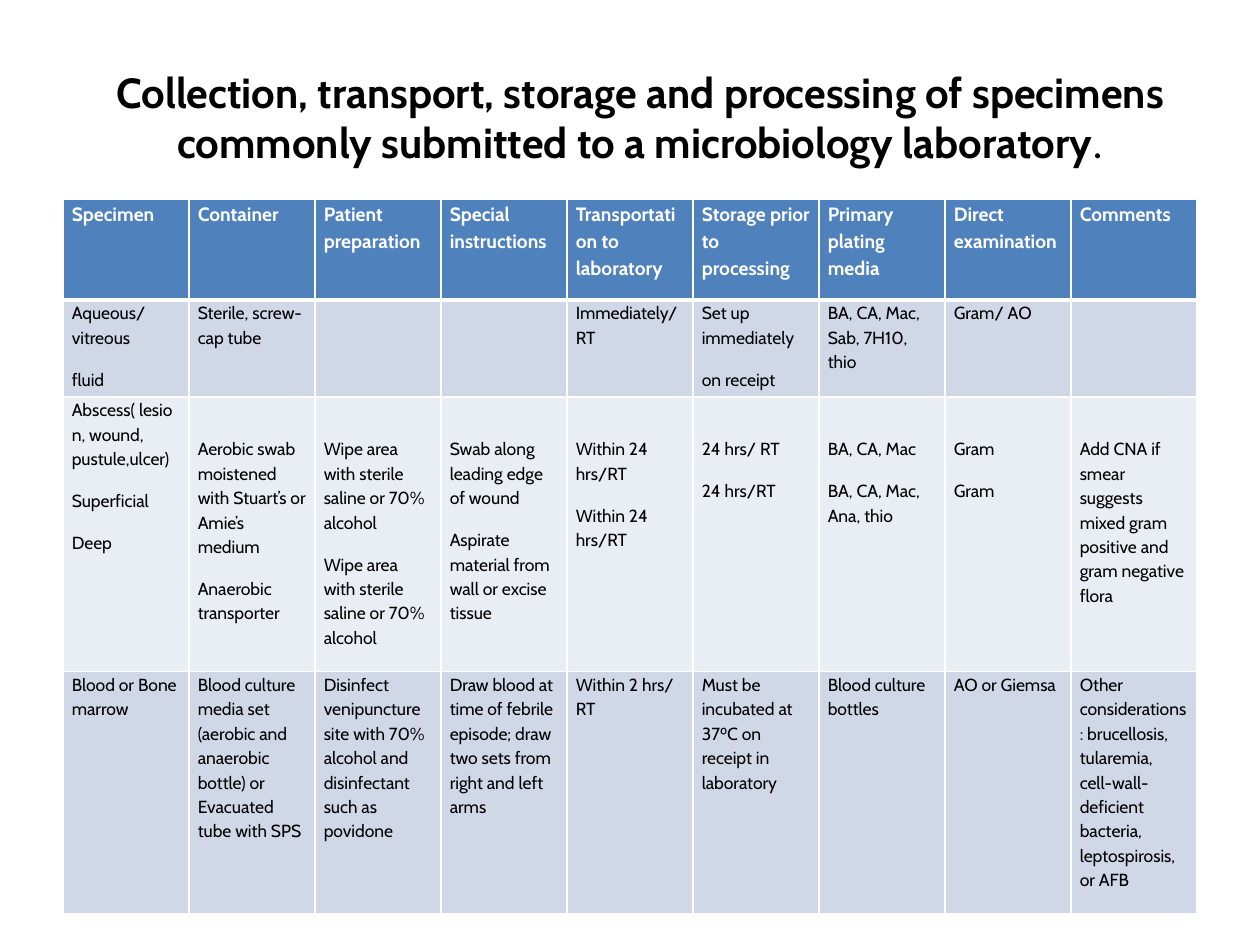
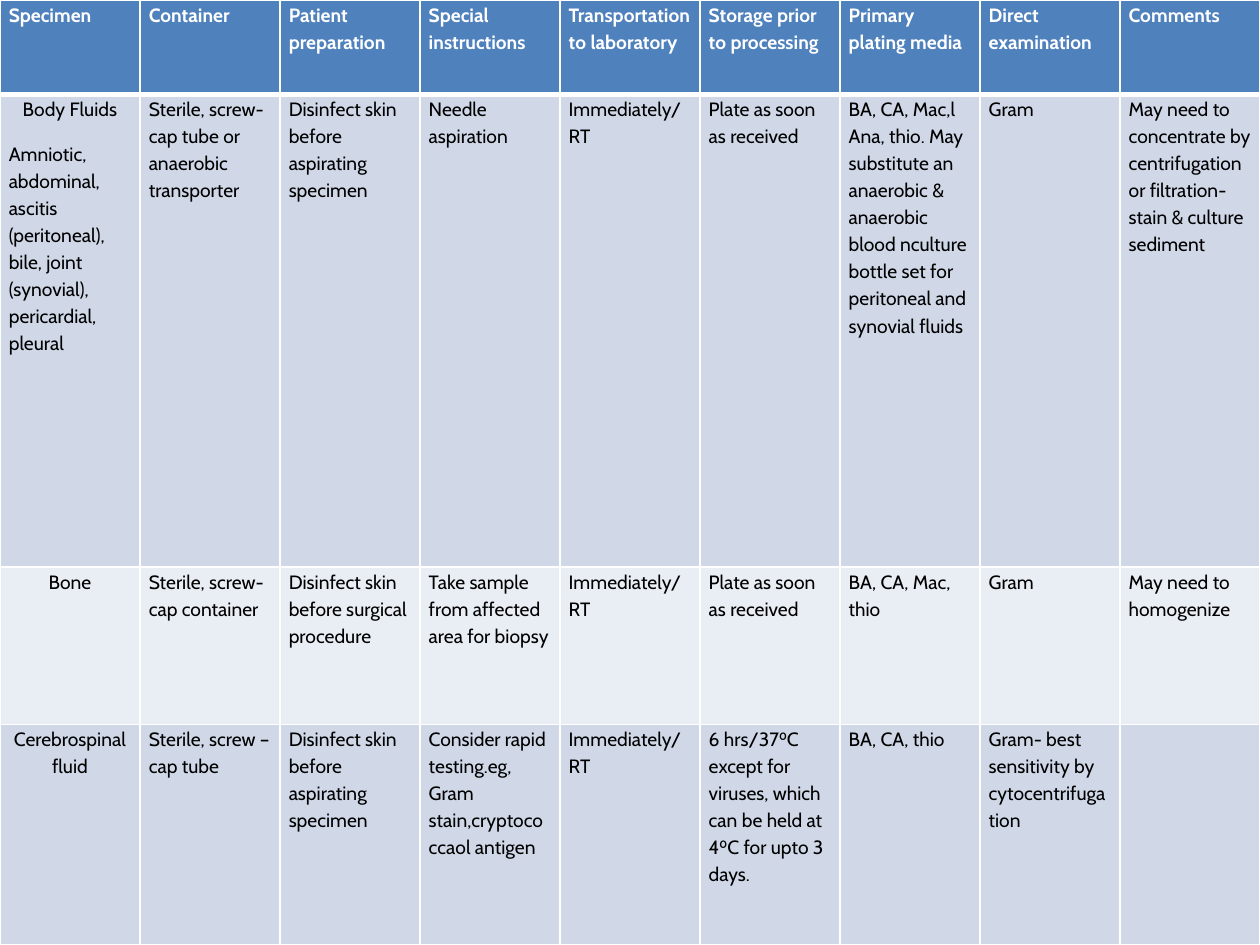
import pptx
import pptx.dml.color
import pptx.enum.text
import pptx.oxml
import pptx.oxml.ns
import pptx.util

COLORS = {
    "header": "4F81BD",
    "odd_row": "D0D8E8",
    "even_row": "E9EDF4",
    "grid": "FFFFFF",
    "header_text": "FFFFFF",
    "text": "000000",
}
FONT = "Cabin"
SLIDE_WIDTH, SLIDE_HEIGHT = 10, 7.5
HEADER_SIZE = 11
THIN, THICK = 1, 3
ALIGN = pptx.enum.text.PP_ALIGN

HEADINGS = [
    "Specimen", "Container", "Patient preparation", "Special instructions",
    "Transportation to laboratory", "Storage prior to processing",
    "Primary plating media", "Direct examination", "Comments",
]
COMMON_SPECIMENS = [
    [
        "Aqueous/vitreous\nfluid", "Sterile, screw-cap tube", "", "",
        "Immediately/RT", "Set up immediately\non receipt",
        "BA, CA, Mac, Sab, 7H10, thio", "Gram/ AO", "",
    ],
    [
        "Abscess( lesion, wound, pustule,ulcer)\nSuperficial\nDeep",
        "Aerobic swab moistened with Stuart’s or Amie’s medium\nAnaerobic transporter",
        "Wipe area with sterile saline or 70% alcohol\n"
        "Wipe area with sterile saline or 70% alcohol",
        "Swab along leading edge of wound\nAspirate material from wall or excise tissue",
        "Within 24 hrs/RT\nWithin 24 hrs/RT",
        "24 hrs/ RT\n24 hrs/RT",
        "BA, CA, Mac\nBA, CA, Mac, Ana, thio",
        "Gram\nGram",
        "Add CNA if smear suggests mixed gram positive and gram negative flora",
    ],
    [
        "Blood or Bone marrow",
        "Blood culture media set (aerobic and anaerobic bottle) or Evacuated tube with SPS",
        "Disinfect venipuncture site with 70% alcohol and disinfectant such as povidone",
        "Draw blood at time of febrile episode; draw two sets from right and left arms",
        "Within 2 hrs/ RT",
        "Must be incubated at 37⁰C on receipt in laboratory",
        "Blood culture bottles",
        "AO or Giemsa",
        "Other considerations: brucellosis, tularemia, cell-wall- deficient bacteria, "
        "leptospirosis, or AFB",
    ],
]
FLUIDS_AND_BONE = [
    [
        "Body Fluids\nAmniotic, abdominal, ascitis (peritoneal), bile, joint (synovial), "
        "pericardial, pleural",
        "Sterile, screw-cap tube or anaerobic transporter",
        "Disinfect skin before aspirating specimen",
        "Needle aspiration", "Immediately/ RT", "Plate as soon as received",
        "BA, CA, Mac,l Ana, thio. May substitute an anaerobic & anaerobic blood nculture "
        "bottle set for peritoneal and synovial fluids",
        "Gram",
        "May need to concentrate by centrifugation or filtration- stain & culture sediment",
    ],
    [
        "Bone", "Sterile, screw-cap container",
        "Disinfect skin before surgical procedure",
        "Take sample from affected area for biopsy",
        "Immediately/RT", "Plate as soon as received", "BA, CA, Mac, thio",
        "Gram", "May need to homogenize",
    ],
    [
        "Cerebrospinal fluid", "Sterile, screw –cap tube",
        "Disinfect skin before aspirating specimen",
        "Consider rapid testing.eg, Gram stain,cryptococcaol antigen",
        "Immediately/RT",
        "6 hrs/37⁰C except for viruses, which can be held at 4⁰C for upto 3 days.",
        "BA, CA, thio", "Gram- best sensitivity by cytocentrifugation", "",
    ],
]


def rgb(name):
    """Return the named palette colour."""
    return pptx.dml.color.RGBColor.from_string(COLORS[name])


def add_run(paragraph, text, size, color, bold, font=FONT):
    """Append one formatted run to a paragraph."""
    run = paragraph.add_run()
    run.text = text
    run.font.name = font
    run.font.size = pptx.util.Pt(size)
    run.font.bold = bold
    run.font.color.rgb = rgb(color)


def set_borders(cell, top, bottom):
    """Draw the white grid lines around a cell, with widths in points."""
    properties = cell._tc.get_or_add_tcPr()
    widths = {"lnL": THIN, "lnR": THIN, "lnT": top, "lnB": bottom}
    for position, (side, width) in enumerate(widths.items()):
        line = pptx.oxml.parse_xml(
            f'<a:{side} {pptx.oxml.ns.nsdecls("a")} w="{pptx.util.Pt(width)}">'
            f'<a:solidFill><a:srgbClr val="{COLORS["grid"]}"/></a:solidFill></a:{side}>'
        )
        properties.insert(position, line)


def fill_cell(cell, text, size, color, bold, first_align, top_margin):
    """Write each line of text as a spaced paragraph of the cell."""
    cell.margin_left = cell.margin_right = pptx.util.Inches(0.07)
    cell.margin_top = pptx.util.Inches(top_margin)
    cell.margin_bottom = 0
    for index, line in enumerate(text.split("\n")):
        frame = cell.text_frame
        paragraph = frame.add_paragraph() if index else frame.paragraphs[0]
        paragraph.alignment = ALIGN.LEFT if index else first_align
        paragraph.line_spacing = 1.15
        paragraph.space_after = pptx.util.Pt(10)
        if line:
            add_run(paragraph, line, size, color, bold)


def add_specimen_table(slide, left, top, width, row_heights, specimens, body_size,
                       specimen_align=ALIGN.LEFT, lowered_row=None):
    """Add a specimen table under the shared headings."""
    rows = [HEADINGS] + specimens
    table = slide.shapes.add_table(
        len(rows), len(HEADINGS), pptx.util.Inches(left), pptx.util.Inches(top),
        pptx.util.Inches(width), pptx.util.Inches(sum(row_heights)),
    ).table
    for column in table.columns:
        column.width = pptx.util.Inches(width / len(HEADINGS))
    for row, (height, texts) in enumerate(zip(row_heights, rows)):
        table.rows[row].height = pptx.util.Inches(height)
        header = row == 0
        band = "header" if header else "odd_row" if row % 2 else "even_row"
        for column, text in enumerate(texts):
            cell = table.cell(row, column)
            cell.fill.solid()
            cell.fill.fore_color.rgb = rgb(band)
            set_borders(cell, THICK if row == 1 else THIN, THICK if header else THIN)
            fill_cell(
                cell, text,
                HEADER_SIZE if header else body_size,
                "header_text" if header else "text",
                header,
                specimen_align if column == 0 and not header else ALIGN.LEFT,
                0.31 if row == lowered_row and column else 0,
            )


def set_title(slide, text, ending):
    """Place the title and set its closing mark in the lighter font."""
    title = slide.shapes.title
    title.left, title.top = pptx.util.Inches(0.58), pptx.util.Inches(0.5)
    title.width, title.height = pptx.util.Inches(9), pptx.util.Inches(1.25)
    frame = title.text_frame
    frame.word_wrap = True
    frame.vertical_anchor = pptx.enum.text.MSO_ANCHOR.MIDDLE
    frame.margin_bottom = pptx.util.Inches(0.45)
    paragraph = frame.paragraphs[0]
    paragraph.alignment = ALIGN.CENTER
    add_run(paragraph, text, 24, "text", True)
    add_run(paragraph, ending, 24, "text", False, "Calibri")


def main():
    """Build the two specimen slides and save them."""
    deck = pptx.Presentation()
    deck.slide_width = pptx.util.Inches(SLIDE_WIDTH)
    deck.slide_height = pptx.util.Inches(SLIDE_HEIGHT)
    title_only, blank = deck.slide_layouts[5], deck.slide_layouts[6]

    common = deck.slides.add_slide(title_only)
    set_title(
        common,
        "Collection, transport, storage and processing of specimens commonly "
        "submitted to a microbiology laboratory",
        ".",
    )
    add_specimen_table(
        common, SLIDE_WIDTH * 0.05, 1.58, SLIDE_WIDTH * 0.9,
        [0.8, 0.77, 2.18, 1.92], COMMON_SPECIMENS, 10, lowered_row=2,
    )

    fluids = deck.slides.add_slide(blank)
    shares = [3, 15, 5, 7]
    add_specimen_table(
        fluids, 0, 0, SLIDE_WIDTH,
        [SLIDE_HEIGHT * share / sum(shares) for share in shares],
        FLUIDS_AND_BONE, 11, specimen_align=ALIGN.CENTER,
    )
    deck.save("out.pptx")


if __name__ == "__main__":
    main()
